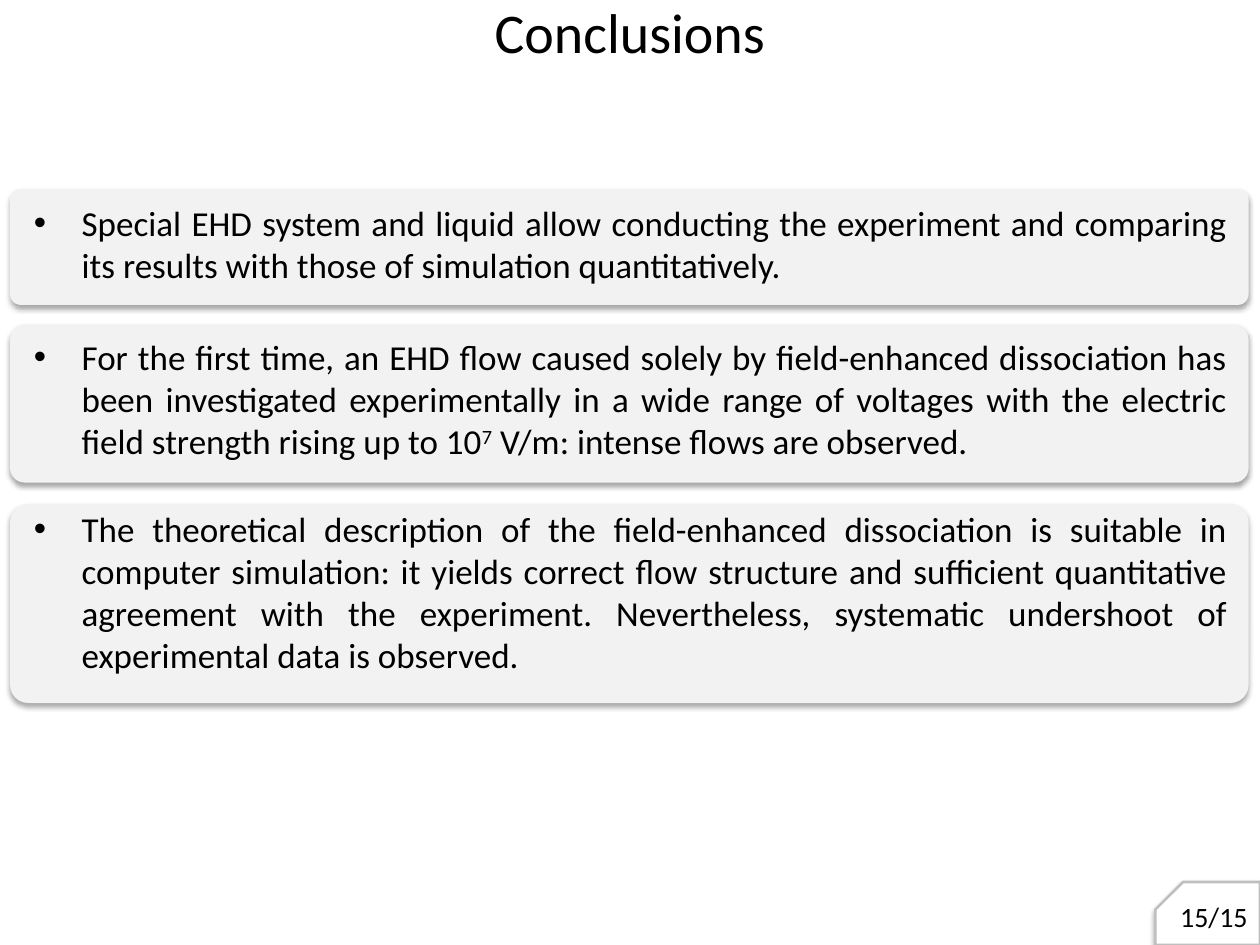
from dataclasses import dataclass

from lxml import etree
from pptx import Presentation
from pptx import util as u
from pptx.dml.color import RGBColor
from pptx.enum import shapes, text
from pptx.oxml import parse_xml
from pptx.oxml.ns import nsdecls, qn
from pptx.util import Inches


@dataclass(frozen=True)
class Theme:
    font: str = "Calibri"
    ink: RGBColor = RGBColor(0, 0, 0)
    card: RGBColor = RGBColor(0xF2, 0xF2, 0xF2)
    paper: RGBColor = RGBColor(0xFF, 0xFF, 0xFF)
    edge: RGBColor = RGBColor(0xBF, 0xBF, 0xBF)
    title_size: u.Pt = u.Pt(32)
    body_size: u.Pt = u.Pt(20)
    number_size: u.Pt = u.Pt(16)


theme = Theme()
presentation = Presentation()
presentation.slide_width, presentation.slide_height = Inches(10), Inches(7.5)
slide = presentation.slides.add_slide(presentation.slide_layouts[6])


def add_panel(kind, left, top, width, height, corner, fill):
    """Add a borderless filled shape with a soft shadow below it."""
    shape = slide.shapes.add_shape(
        kind, Inches(left), Inches(top), Inches(width), Inches(height))
    shape.adjustments[0] = corner
    shape.fill.solid()
    shape.fill.fore_color.rgb = fill
    shape.line.fill.background()
    shape.shadow.inherit = False
    effects = shape._element.spPr.find(qn("a:effectLst"))
    effects.append(parse_xml(
        f'<a:outerShdw {nsdecls("a")} blurRad="{u.Pt(3.1)}" dist="{u.Pt(1.8)}"'
        ' dir="5400000" algn="t" rotWithShape="0">'
        '<a:srgbClr val="000000"><a:alpha val="35000"/></a:srgbClr></a:outerShdw>'))
    return shape


def add_text(left, top, width, height, paragraphs, size, alignment, anchor):
    """Add a text box; every second part between ^ marks is superscript."""
    box = slide.shapes.add_textbox(
        Inches(left), Inches(top), Inches(width), Inches(height))
    frame = box.text_frame
    frame.word_wrap = True
    frame.vertical_anchor = anchor
    frame.text = "\n".join(wording.replace("^", "") for wording in paragraphs)
    for paragraph, wording in zip(frame.paragraphs, paragraphs):
        paragraph.alignment = alignment
        parts = wording.split("^")
        paragraph.runs[0].text = parts[0]
        for part in parts[1:]:
            paragraph.add_run().text = part
        for index, run in enumerate(paragraph.runs):
            run.font.name = theme.font
            run.font.size = size
            run.font.color.rgb = theme.ink
            if index % 2:
                run.font._element.set("baseline", "30000")
    return frame


# Cards behind the conclusions
for top, height in [(1.5, 0.92), (2.58, 1.25), (4, 1.58)]:
    add_panel(shapes.MSO_SHAPE.ROUNDED_RECTANGLE,
              0.08, top, 9.83, height, 0.092, theme.card)

# Conclusions, spaced to fall one on each card
conclusions = [
    "Special EHD system and liquid allow conducting the experiment and comparing "
    "its results with those of simulation quantitatively.",
    "For the first time, an EHD flow caused solely by field-enhanced dissociation "
    "has been investigated experimentally in a wide range of voltages with the "
    "electric field strength rising up to 10^7^ V/m: intense flows are observed.",
    "The theoretical description of the field-enhanced dissociation is suitable in "
    "computer simulation: it yields correct flow structure and sufficient "
    "quantitative agreement with the experiment. Nevertheless, systematic "
    "undershoot of experimental data is observed.",
]
body = add_text(0.17, 1.55, 9.67, 4.03, conclusions, theme.body_size,
                text.PP_ALIGN.JUSTIFY, text.MSO_ANCHOR.TOP)
for paragraph, gap in zip(body.paragraphs, (0, 28.6, 26.2)):
    paragraph.space_before = u.Pt(gap)
    properties = paragraph._p.get_or_add_pPr()
    properties.set("marL", str(Inches(0.38)))
    properties.set("indent", str(Inches(-0.38)))
    etree.SubElement(properties, qn("a:buFont")).set("typeface", "Arial")
    etree.SubElement(properties, qn("a:buChar")).set("char", "•")

# Title
add_text(0.5, 0, 9, 0.5, ["Conclusions"], theme.title_size,
         text.PP_ALIGN.CENTER, text.MSO_ANCHOR.MIDDLE)

# Page number on a tab with its top left corner cut
tab = add_panel(shapes.MSO_SHAPE.SNIP_1_RECTANGLE,
                9.17, 7, 0.83, 0.5, 0.438, theme.paper)
tab._element.spPr.xfrm.set("flipH", "1")
tab.line.color.rgb = theme.edge
tab.line.width = u.Pt(1.5)
add_text(9.25, 7.07, 0.75, 0.4, ["15/15"], theme.number_size,
         text.PP_ALIGN.RIGHT, text.MSO_ANCHOR.MIDDLE)

presentation.save("out.pptx")
